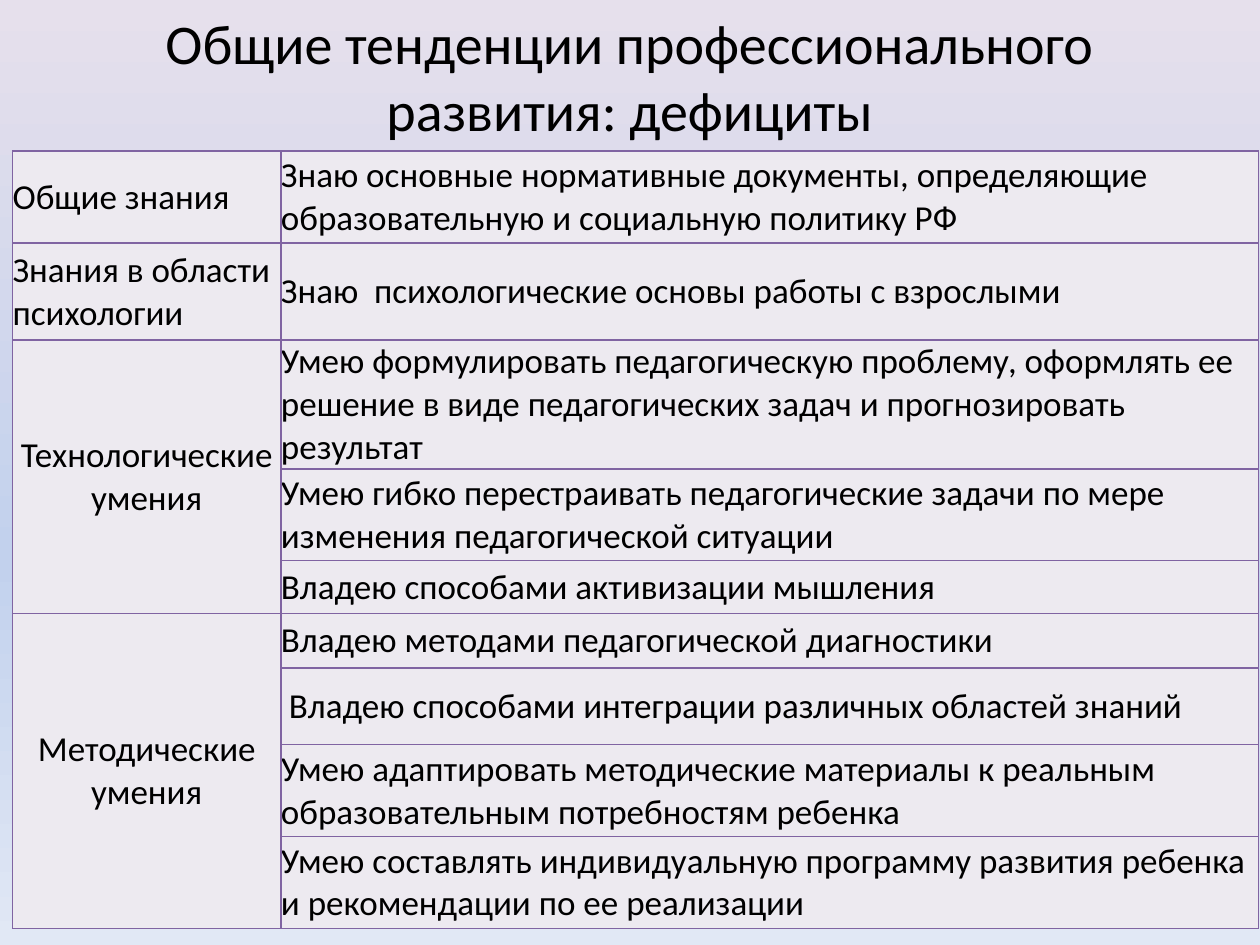
from lxml.etree import SubElement
from pptx import Presentation
from pptx.dml.color import RGBColor
from pptx.enum.text import MSO_ANCHOR, PP_ALIGN
from pptx.oxml.ns import qn
from pptx.util import Inches, Pt

WIDE, HIGH = 10, 7.5
COLS = [2.13, 7.76]
GROUPS = [
    ("Общие знания", PP_ALIGN.LEFT, [
        (0.73, "Знаю основные нормативные документы, определяющие "
               "образовательную и социальную политику РФ")]),
    ("Знания в области психологии", PP_ALIGN.LEFT, [
        (0.77, "Знаю  психологические основы работы с взрослыми")]),
    ("Технологические умения", PP_ALIGN.CENTER, [
        (1.0, "Умею формулировать педагогическую проблему, оформлять ее "
              "решение в виде педагогических задач и прогнозировать результат"),
        (0.73, "Умею гибко перестраивать педагогические задачи по мере "
               "изменения педагогической ситуации"),
        (0.42, "Владею способами активизации мышления")]),
    ("Методические умения", PP_ALIGN.CENTER, [
        (0.43, "Владею методами педагогической диагностики"),
        (0.61, " Владею способами интеграции различных областей знаний"),
        (0.73, "Умею адаптировать методические материалы к реальным "
               "образовательным потребностям ребенка"),
        (0.73, "Умею составлять индивидуальную программу развития ребенка "
               "и рекомендации по ее реализации")]),
]


def color(text):
    return RGBColor.from_string(text)


class Deck:
    face, ink, pale, edge = "Calibri", "000000", "EDEAF0", "8064A2"

    def __init__(self):
        self.show = Presentation()
        self.show.slide_width = Inches(WIDE)
        self.show.slide_height = Inches(HIGH)
        self.slide = self.show.slides.add_slide(self.show.slide_layouts[5])

    def ground(self, stops):
        fill = self.slide.background.fill
        fill.gradient()
        fill.gradient_angle = 270
        ramp = self.slide.element.find(".//" + qn("a:gsLst"))
        for old in list(ramp):
            ramp.remove(old)
        for share, tone in stops:
            stop = SubElement(ramp, qn("a:gs"), pos=str(share * 1000))
            SubElement(stop, qn("a:srgbClr"), val=tone)

    def label(self, frame, text, size, align):
        frame.text = text
        frame.word_wrap = True
        para = frame.paragraphs[0]
        para.alignment = align
        para.font.name = self.face
        para.font.size = Pt(size)
        para.font.color.rgb = color(self.ink)

    def title(self, text, left, top, width, height):
        box = self.slide.shapes.title
        box.left, box.width = Inches(left * WIDE), Inches(width * WIDE)
        box.top, box.height = Inches(top * HIGH), Inches(height * HIGH)
        box.text_frame.vertical_anchor = MSO_ANCHOR.MIDDLE
        self.label(box.text_frame, text, 32, PP_ALIGN.CENTER)

    def cell(self, cell, text="", align=PP_ALIGN.LEFT):
        cell.margin_left = cell.margin_right = 0
        cell.margin_top = cell.margin_bottom = 0
        cell.vertical_anchor = MSO_ANCHOR.MIDDLE
        props = cell._tc.get_or_add_tcPr()
        for side in ("lnL", "lnR", "lnT", "lnB"):
            line = SubElement(props, qn("a:" + side), w=str(Pt(1)))
            paint = SubElement(line, qn("a:solidFill"))
            SubElement(paint, qn("a:srgbClr"), val=self.edge)
        cell.fill.solid()
        cell.fill.fore_color.rgb = color(self.pale)
        self.label(cell.text_frame, text, 20, align)

    def table(self, groups, cols, left, top):
        rows = [row for group in groups for row in group[2]]
        high = sum(size for size, text in rows)
        grid = self.slide.shapes.add_table(
            len(rows), len(cols), Inches(left * WIDE), Inches(top * HIGH),
            Inches(sum(cols)), Inches(high)).table
        grid.first_row = grid.horz_banding = False
        for col, width in zip(grid.columns, cols):
            col.width = Inches(width)
        first = 0
        for name, align, items in groups:
            last = first + len(items) - 1
            for row, (size, text) in enumerate(items, first):
                grid.rows[row].height = Inches(size)
                self.cell(grid.cell(row, 0), name if row == first else "", align)
                self.cell(grid.cell(row, 1), text)
            if last > first:
                grid.cell(first, 0).merge(grid.cell(last, 0))
            first = last + 1


def main():
    deck = Deck()
    deck.ground([(0, "E6E0EC"), (59, "C2D1ED"), (100, "E1E8F5")])
    deck.title("Общие тенденции профессионального развития: дефициты",
               0.05, 0, 0.9, 0.16)
    deck.table(GROUPS, COLS, 0.01, 0.16)
    deck.show.save("out.pptx")


if __name__ == "__main__":
    main()
